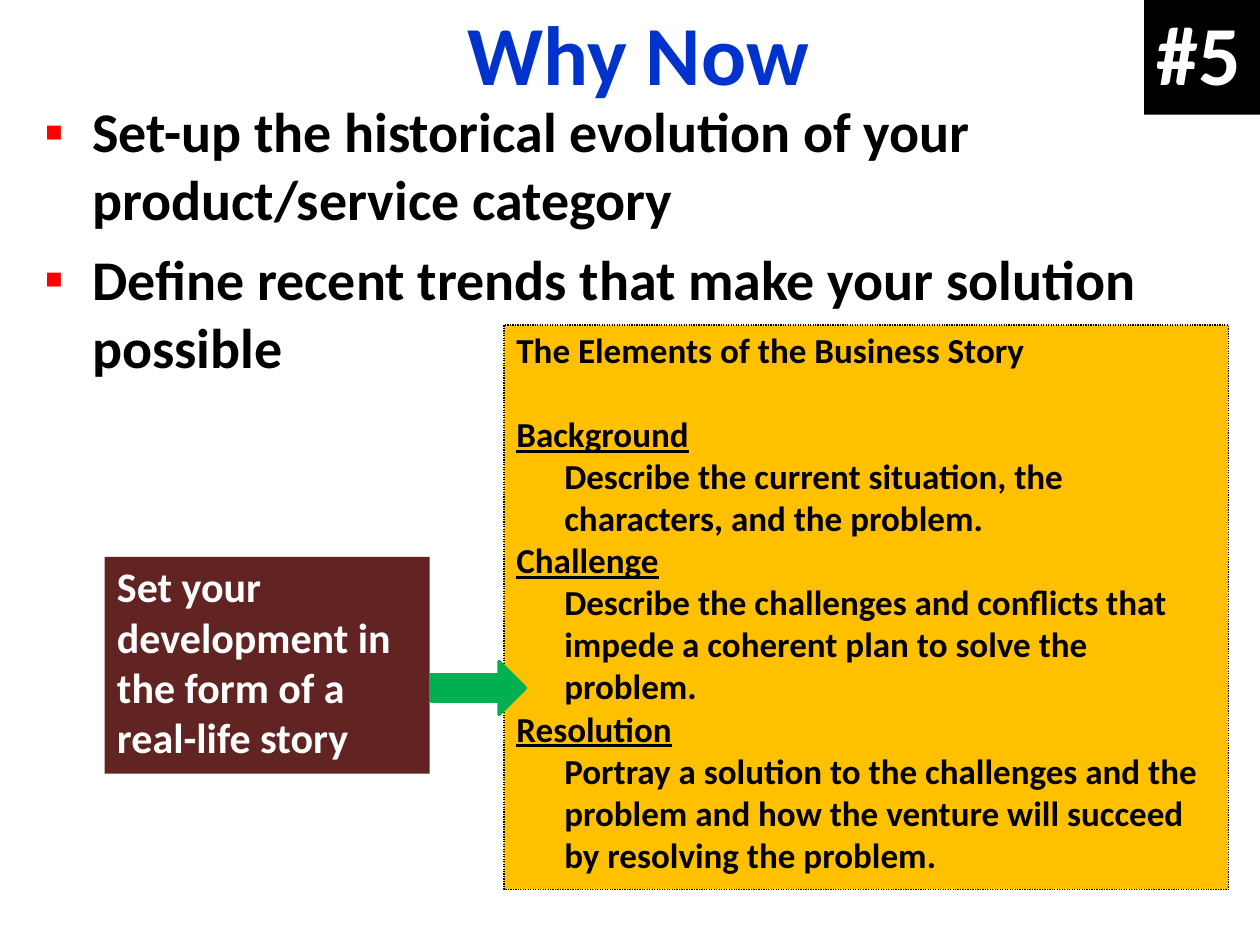
from dataclasses import dataclass

from lxml.etree import SubElement
from pptx import Presentation
from pptx.dml.color import RGBColor
from pptx.enum.dml import MSO_LINE
from pptx.enum.shapes import MSO_SHAPE
from pptx.enum.text import MSO_ANCHOR, MSO_AUTO_SIZE, PP_ALIGN
from pptx.oxml.ns import qn
from pptx.util import Inches, Pt


@dataclass(frozen=True)
class Theme:
    font: str = "Calibri"
    title: str = "0033CC"
    text: str = "000000"
    inverse: str = "FFFFFF"
    bullet: str = "FF0000"
    panel: str = "FFC000"
    callout: str = "622422"
    arrow: str = "00AF50"
    badge: str = "000000"
    title_size: int = 48
    list_size: int = 32
    callout_size: int = 24
    panel_size: int = 20


THEME = Theme()

POINTS = [
    "Set-up the historical evolution of your product/service category",
    "Define recent trends that make your solution possible",
]
STORY_TITLE = "The Elements of the Business Story"
STORY = [
    ("Background", "Describe the current situation, the characters, and the problem."),
    ("Challenge", "Describe the challenges and conflicts that impede a coherent plan "
                  "to solve the problem."),
    ("Resolution", "Portray a solution to the challenges and the problem and how the "
                   "venture will succeed by resolving the problem."),
]


def place(shape, box):
    shape.left, shape.top, shape.width, shape.height = (Inches(value) for value in box)


def prepare_frame(shape, left=0, top=0.01, right=0):
    frame = shape.text_frame
    frame.word_wrap = True
    frame.auto_size = MSO_AUTO_SIZE.NONE
    frame.vertical_anchor = MSO_ANCHOR.TOP
    frame.margin_left, frame.margin_top = Inches(left), Inches(top)
    frame.margin_right, frame.margin_bottom = Inches(right), 0
    return frame


def write(paragraph, text, size, color, before=0, underline=False):
    paragraph.alignment = PP_ALIGN.LEFT
    paragraph.space_before = Pt(before)
    run = paragraph.add_run()
    run.text = text
    font = run.font
    font.name, font.size, font.bold = THEME.font, Pt(size), True
    font.underline = underline
    font.color.rgb = RGBColor.from_string(color)


def indent(paragraph, margin, first_line=0):
    properties = paragraph._p.get_or_add_pPr()
    properties.set("marL", str(Inches(margin)))
    properties.set("indent", str(Inches(first_line)))
    return properties


def add_block(slide, kind, box, fill):
    shape = slide.shapes.add_shape(kind, *(Inches(value) for value in box))
    shape.shadow.inherit = False
    shape.fill.solid()
    shape.fill.fore_color.rgb = RGBColor.from_string(fill)
    shape.line.fill.background()
    return shape


def add_title(slide, box):
    shape = slide.shapes.title
    place(shape, box)
    frame = prepare_frame(shape)
    write(frame.paragraphs[0], "Why Now", THEME.title_size, THEME.title, before=1)


def add_list(slide, box):
    shape = slide.placeholders[1]
    place(shape, box)
    frame = prepare_frame(shape)
    for index, text in enumerate(POINTS):
        paragraph = frame.add_paragraph() if index else frame.paragraphs[0]
        write(paragraph, text, THEME.list_size, THEME.text, before=7.7 if index else 0.9)
        # Red square bullet with a hanging indent
        properties = indent(paragraph, 0.39, -0.38)
        color = SubElement(properties, qn("a:buClr"))
        SubElement(color, qn("a:srgbClr"), val=THEME.bullet)
        SubElement(properties, qn("a:buChar"), char="▪")


def add_story_panel(slide, box):
    panel = add_block(slide, MSO_SHAPE.RECTANGLE, box, THEME.panel)
    panel.line.color.rgb = RGBColor.from_string(THEME.text)
    panel.line.width = Pt(0.72)
    panel.line.dash_style = MSO_LINE.ROUND_DOT
    frame = prepare_frame(panel, left=0.1, top=0.03, right=0.19)
    write(frame.paragraphs[0], STORY_TITLE, THEME.panel_size, THEME.text, before=0.9)
    for index, (heading, detail) in enumerate(STORY):
        write(frame.add_paragraph(), heading, THEME.panel_size, THEME.text,
              before=0 if index else 24, underline=True)
        paragraph = frame.add_paragraph()
        write(paragraph, detail, THEME.panel_size, THEME.text)
        indent(paragraph, 0.38)


def add_callout(slide, box):
    callout = add_block(slide, MSO_SHAPE.RECTANGLE, box, THEME.callout)
    frame = prepare_frame(callout, left=0.1, top=0.03)
    write(frame.paragraphs[0], "Set your development in the form of a real-life story",
          THEME.callout_size, THEME.inverse, before=2.3)


def add_arrow(slide, box):
    arrow = add_block(slide, MSO_SHAPE.RIGHT_ARROW, box, THEME.arrow)
    arrow.line.color.rgb = RGBColor.from_string(THEME.arrow)
    arrow.line.width = Pt(1.92)


def add_badge(slide, box):
    badge = add_block(slide, MSO_SHAPE.RECTANGLE, box, THEME.badge)
    frame = prepare_frame(badge, left=0.1)
    write(frame.paragraphs[0], "#5", THEME.title_size, THEME.inverse, before=1)


def main():
    presentation = Presentation()
    presentation.slide_width, presentation.slide_height = Inches(10), Inches(7.5)
    slide = presentation.slides.add_slide(presentation.slide_layouts[1])
    add_title(slide, (3.71, 0, 2.74, 0.83))
    add_list(slide, (0.34, 0.76, 8.8, 2.27))
    add_story_panel(slide, (4, 2.58, 5.75, 4.48))
    add_callout(slide, (0.83, 4.42, 2.58, 1.72))
    add_arrow(slide, (3.42, 5.25, 0.75, 0.42))
    add_badge(slide, (9.08, 0, 0.92, 0.91))
    presentation.save("out.pptx")


if __name__ == "__main__":
    main()
